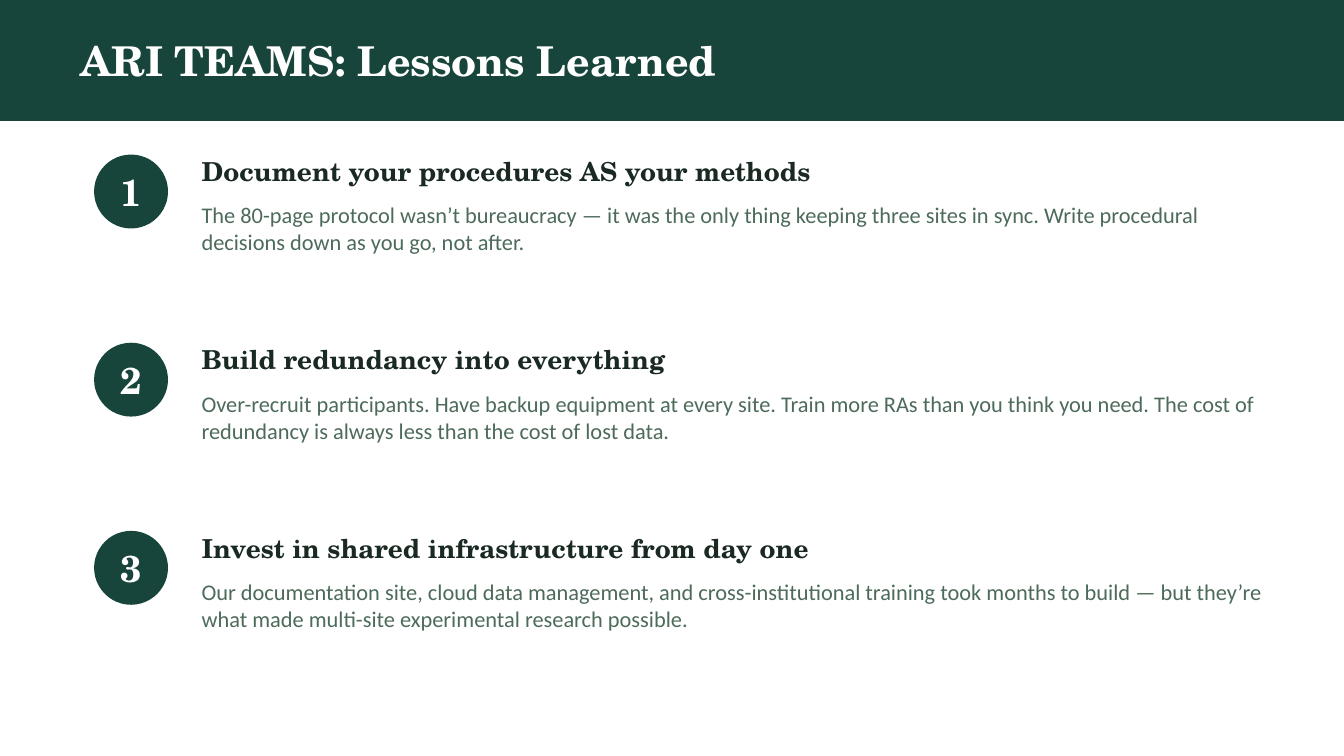
from pptx import Presentation
from pptx.dml.color import RGBColor
from pptx.enum.shapes import MSO_SHAPE
from pptx.enum.text import MSO_ANCHOR, PP_ALIGN
from pptx.util import Pt

RECT, OVAL = MSO_SHAPE.RECTANGLE, MSO_SHAPE.OVAL
TOP, MIDDLE = MSO_ANCHOR.TOP, MSO_ANCHOR.MIDDLE
LEFT, CENTER = PP_ALIGN.LEFT, PP_ALIGN.CENTER
GREEN, WHITE, INK, SAGE = "18453B", "FFFFFF", "1A2A22", "4D6B5A"
SERIF, SANS = "TeX Gyre Schola", "Calibri"

prs = Presentation()
prs.slide_width, prs.slide_height = Pt(720), Pt(405)
s = prs.slides.add_slide(prs.slide_layouts[6])


def add_shape(kind, x, y, w, h):
    sp = s.shapes.add_shape(kind, Pt(x), Pt(y), Pt(w), Pt(h))
    sp.shadow.inherit = False
    sp.fill.solid()
    sp.fill.fore_color.rgb = RGBColor.from_string(GREEN)
    sp.line.fill.background()


def add_text(text, x, y, w, h, size, color, font=SERIF, bold=True,
             anchor=MIDDLE, align=LEFT):
    tf = s.shapes.add_textbox(Pt(x), Pt(y), Pt(w), Pt(h)).text_frame
    tf.word_wrap = True
    tf.margin_left = tf.margin_right = tf.margin_top = tf.margin_bottom = 0
    tf.vertical_anchor = anchor
    p = tf.paragraphs[0]
    p.text = text
    p.alignment = align
    p.font.name, p.font.size, p.font.bold = font, Pt(size), bold
    p.font.color.rgb = RGBColor.from_string(color)


# Title band
add_shape(RECT, 0, 0, 720, 64.8)
add_text("ARI TEAMS: Lessons Learned", 43.2, 7.2, 633.6, 50.4, 22, WHITE)

# Numbered lessons
lessons = [
    ("Document your procedures AS your methods",
     "The 80-page protocol wasn’t bureaucracy — it was the only thing keeping "
     "three sites in sync. Write procedural decisions down as you go, not after."),
    ("Build redundancy into everything",
     "Over-recruit participants. Have backup equipment at every site. Train more "
     "RAs than you think you need. The cost of redundancy is always less than "
     "the cost of lost data."),
    ("Invest in shared infrastructure from day one",
     "Our documentation site, cloud data management, and cross-institutional "
     "training took months to build — but they’re what made multi-site "
     "experimental research possible."),
]
for i, (heading, body) in enumerate(lessons):
    y = 79.2 + i * 100.8
    badge = (50.4, y + 3.6, 39.6, 39.6)
    add_shape(OVAL, *badge)
    add_text(str(i + 1), *badge, 20, WHITE, align=CENTER)
    add_text(heading, 108, y, 576, 25.2, 14, INK)
    add_text(body, 108, y + 28.8, 576, 61.2, 12, SAGE, SANS, False, TOP)

prs.save("out.pptx")
